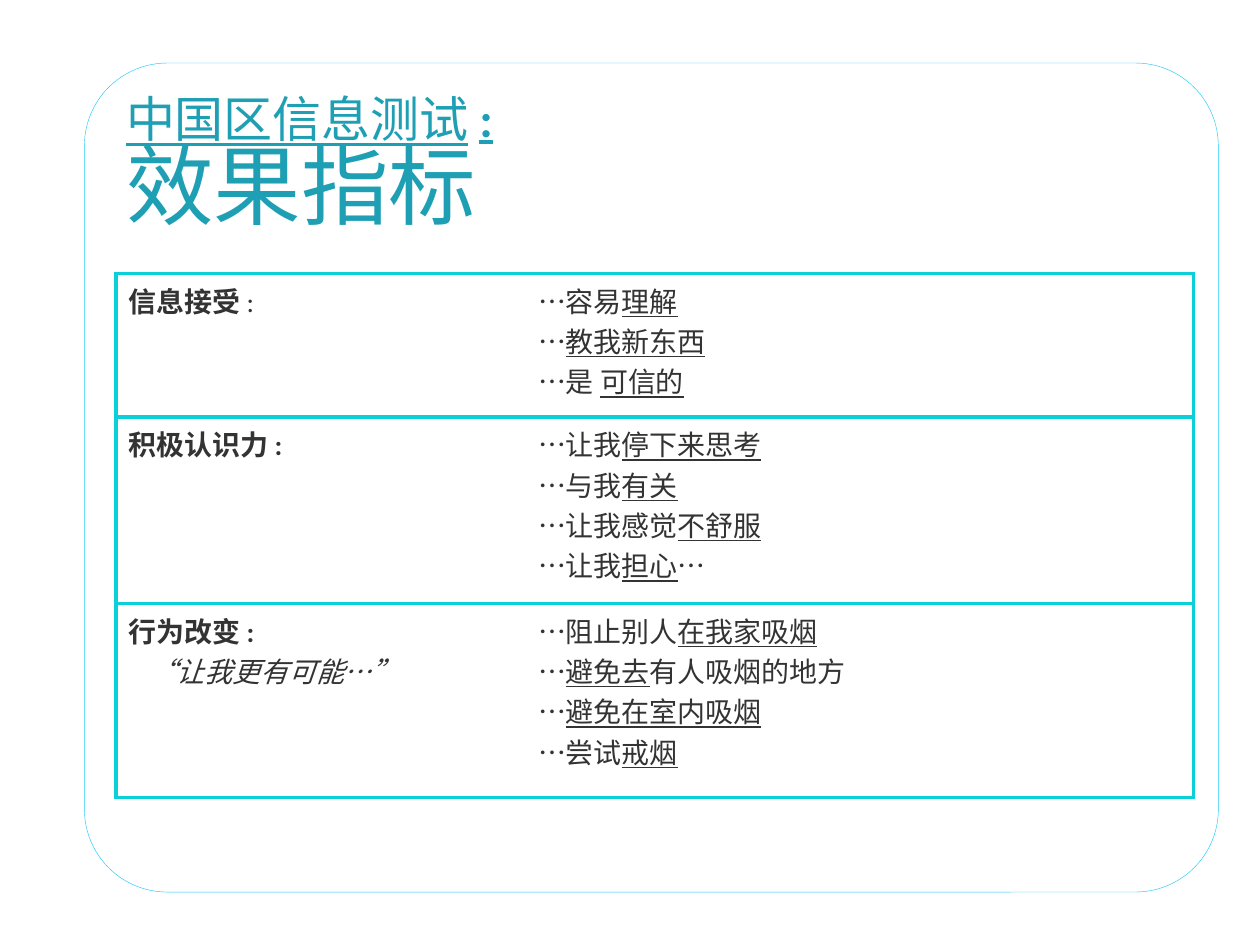
from lxml import etree
from pptx import Presentation
from pptx.dml.color import RGBColor
from pptx.enum.shapes import MSO_SHAPE
from pptx.enum.text import MSO_ANCHOR
from pptx.oxml.ns import qn
from pptx.util import Inches, Pt

ROUND_RECT = MSO_SHAPE.ROUNDED_RECTANGLE
TOP = MSO_ANCHOR.TOP
THEME = {
    "font": "Calibri",
    "frame": "20C9F8", "title": "1E9FB4", "border": "0BD0D9", "text": "333333",
    "heading_size": 28, "title_size": 50, "body_size": 16,
    "frame_width": 0.25, "border_width": 2.25,
}
NO_TABLE_STYLE = "{2D5ABB26-0587-4C30-8999-92F81FD0307C}"

COLUMNS = [3.25, 5.3]
# Row height, heading, its bold share, quoted lead-in, effects; _marks_ underline.
ROWS = [
    (1.14, "信息接受 ", ":", "", ["…容易_理解_", "…_教我新东西_", "…是 _可信的_"]),
    (1.48, "积极认识力 :", "", "",
     ["…让我_停下来思考_", "…与我_有关_", "…让我感觉_不舒服_", "…让我_担心_…"]),
    (1.54, "行为改变 :", "", "“让我更有可能…”",
     ["…阻止别人_在我家吸烟_", "…_避免去_有人吸烟的地方", "…_避免在室内吸烟_", "…尝试_戒烟_"]),
]


def add_run(p, text, size=THEME["body_size"], color=THEME["text"],
            bold=False, italic=False, underline=False):
    r = p.add_run()
    r.text = text
    r.font.name = THEME["font"]
    r.font.size = Pt(size)
    r.font.color.rgb = RGBColor.from_string(color)
    r.font.bold, r.font.italic, r.font.underline = bold, italic, underline


def set_border(cell, side, visible):
    """Draw or hide one cell side: L, R, T or B, called in that order."""
    width = Pt(THEME["border_width"]) if visible else 0
    line = etree.SubElement(cell._tc.get_or_add_tcPr(), qn(f"a:ln{side}"), w=str(width))
    if visible:
        fill = etree.SubElement(line, qn("a:solidFill"))
        etree.SubElement(fill, qn("a:srgbClr"), val=THEME["border"])
    else:
        etree.SubElement(line, qn("a:noFill"))


prs = Presentation()
prs.slide_width, prs.slide_height = Inches(10), Inches(7.5)
s = prs.slides.add_slide(prs.slide_layouts[6])

# Rounded frame
frame = s.shapes.add_shape(ROUND_RECT, Inches(0.67), Inches(0.5), Inches(9), Inches(6.58))
frame.adjustments[0] = 0.1
frame.shadow.inherit = False
frame.fill.background()
frame.line.color.rgb = RGBColor.from_string(THEME["frame"])
frame.line.width = Pt(THEME["frame_width"])

# Title
title = s.shapes.add_textbox(Inches(1), Inches(0.77), Inches(8.42), Inches(1.25))
tf = title.text_frame
tf.word_wrap = True
tf.vertical_anchor = TOP
tf.margin_left = tf.margin_right = tf.margin_top = tf.margin_bottom = 0
p = tf.paragraphs[0]
p.line_spacing = 0.85
heading = {"size": THEME["heading_size"], "color": THEME["title"]}
add_run(p, "中国区信息测试", underline=True, **heading)
add_run(p, " ", **heading)
add_run(p, ":", bold=True, underline=True, **heading)
p.add_line_break()
add_run(p, "效果指标", THEME["title_size"], THEME["title"])

# Table of indicators
graphic = s.shapes.add_table(len(ROWS), len(COLUMNS), Inches(0.92), Inches(2.17),
                             Inches(sum(COLUMNS)), Inches(sum(row[0] for row in ROWS)))
table = graphic.table
table.first_row = table.horz_banding = False
table._tbl.tblPr.find(qn("a:tableStyleId")).text = NO_TABLE_STYLE
for column, width in zip(table.columns, COLUMNS):
    column.width = Inches(width)

for row, (height, bold_part, plain_part, quote, effects) in zip(table.rows, ROWS):
    row.height = Inches(height)
    label, detail = row.cells
    for cell, outer_side in ((label, "L"), (detail, "R")):
        for side in "LRTB":
            set_border(cell, side, side in ("T", "B", outer_side))
        cell.fill.background()

    p = label.text_frame.paragraphs[0]
    add_run(p, bold_part, bold=True)
    if plain_part:
        add_run(p, plain_part)
    if quote:
        p = label.text_frame.add_paragraph()
        p._p.get_or_add_pPr().set("marL", str(Inches(0.16)))
        add_run(p, quote, italic=True)

    tf = detail.text_frame
    for i, effect in enumerate(effects):
        p = tf.add_paragraph() if i else tf.paragraphs[0]
        for j, part in enumerate(effect.split("_")):
            if part:
                add_run(p, part, underline=j % 2 == 1)

prs.save("out.pptx")
